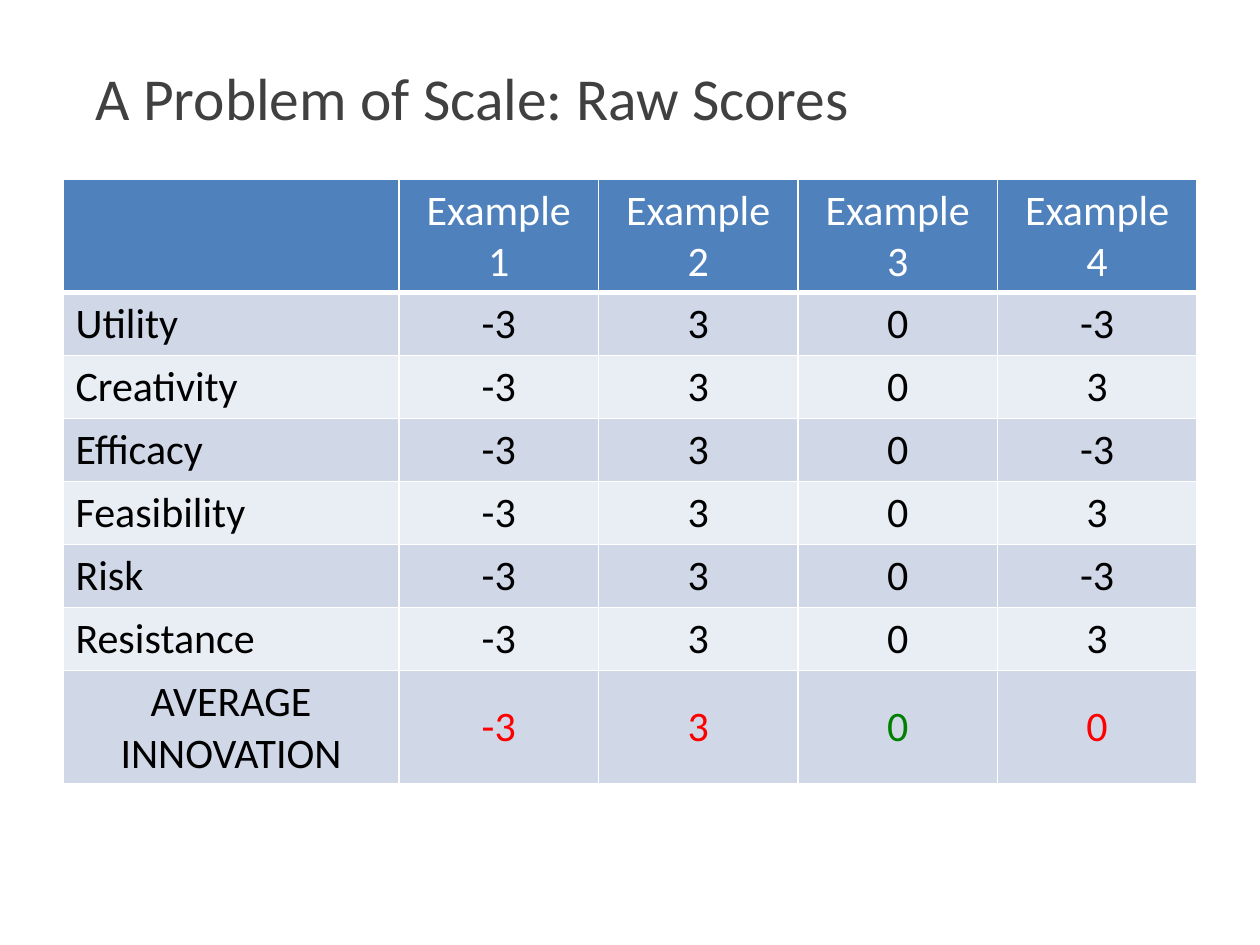
from dataclasses import dataclass

from lxml import etree
from pptx import Presentation
from pptx.dml.color import RGBColor
from pptx.enum.text import MSO_ANCHOR, PP_ALIGN
from pptx.oxml.ns import qn
from pptx.util import Pt

LEFT, CENTER = PP_ALIGN.LEFT, PP_ALIGN.CENTER
MIDDLE = MSO_ANCHOR.MIDDLE


@dataclass(frozen=True)
class Theme:
    font: str = "Calibri"
    title_size: int = 34
    table_size: int = 24
    title: str = "404040"
    header: str = "4F81BD"
    bands: tuple = ("E9EDF4", "D0D8E8")
    white: str = "FFFFFF"
    black: str = "000000"
    red: str = "FF0000"
    green: str = "008000"


theme = Theme()


def write(frame, text, *, size=theme.table_size, color=theme.black, align=LEFT):
    para = frame.paragraphs[0]
    para.alignment = align
    span = para.add_run()
    span.text = text
    span.font.name = theme.font
    span.font.size = Pt(size)
    span.font.color.rgb = RGBColor.from_string(color)


def add_border(cell, side, width):
    line = etree.SubElement(cell._tc.get_or_add_tcPr(), qn(f"a:ln{side}"), w=str(Pt(width)))
    fill = etree.SubElement(line, qn("a:solidFill"))
    etree.SubElement(fill, qn("a:srgbClr"), val=theme.white)


deck = Presentation()
deck.slide_width, deck.slide_height = Pt(720), Pt(540)
page = deck.slides.add_slide(deck.slide_layouts[6])

# Title
title_box = page.shapes.add_textbox(Pt(47.5), Pt(26.6), Pt(631.5), Pt(57.6))
title_box.text_frame.word_wrap = True
title_box.text_frame.vertical_anchor = MIDDLE
write(title_box.text_frame, "A Problem of Scale: Raw Scores",
      size=theme.title_size, color=theme.title)

# Scores
scores = [
    ["", "Example 1", "Example 2", "Example 3", "Example 4"],
    ["Utility", "-3", "3", "0", "-3"],
    ["Creativity", "-3", "3", "0", "3"],
    ["Efficacy", "-3", "3", "0", "-3"],
    ["Feasibility", "-3", "3", "0", "3"],
    ["Risk", "-3", "3", "0", "-3"],
    ["Resistance", "-3", "3", "0", "3"],
    ["AVERAGE INNOVATION", "-3", "3", "0", "0"],
]
average_colors = [theme.black, theme.red, theme.red, theme.green, theme.red]
last_row = len(scores) - 1

# Table grid: the header and the averages take two lines of text
table = page.shapes.add_table(len(scores), len(scores[0]),
                              Pt(36), Pt(102.2), Pt(648), Pt(345.6)).table
for index, column in enumerate(table.columns):
    column.width = Pt(192 if index == 0 else 114)
for index, row in enumerate(table.rows):
    row.height = Pt(64.8 if index in (0, last_row) else 36)

# Table cells
for row_index, row_values in enumerate(scores):
    is_header = row_index == 0
    fill_color = theme.header if is_header else theme.bands[row_index % 2]
    for column_index, value in enumerate(row_values):
        cell = table.cell(row_index, column_index)
        cell.vertical_anchor = MIDDLE
        add_border(cell, "L", 1)
        add_border(cell, "R", 1)
        add_border(cell, "T", 3 if row_index == 1 else 1)
        add_border(cell, "B", 3 if is_header else 1)
        cell.fill.solid()
        cell.fill.fore_color.rgb = RGBColor.from_string(fill_color)

        color = theme.white if is_header else theme.black
        if row_index == last_row:
            color = average_colors[column_index]
        is_label = column_index == 0 and row_index != last_row
        if value:
            write(cell.text_frame, value, color=color, align=LEFT if is_label else CENTER)

deck.save("out.pptx")
